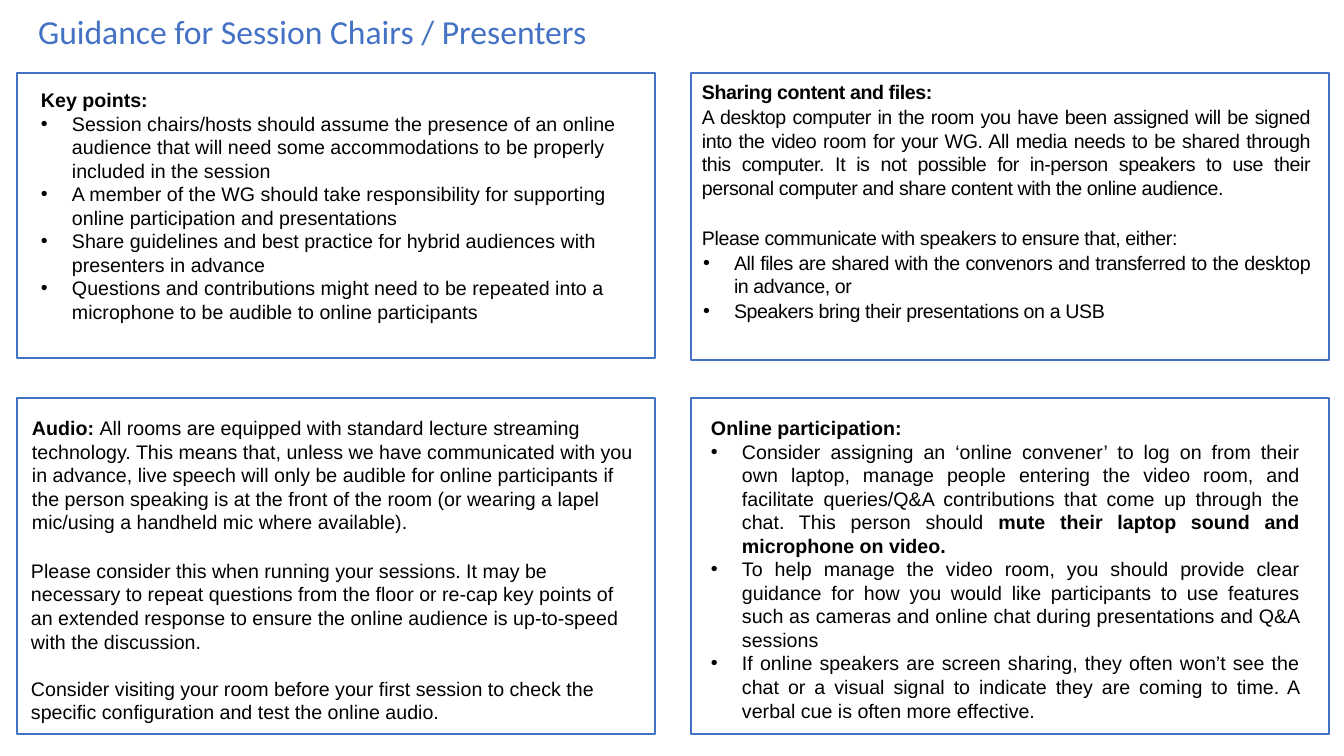
from lxml import etree
from pptx import Presentation
from pptx.dml.color import RGBColor
from pptx.enum.shapes import MSO_SHAPE
from pptx.enum.text import MSO_ANCHOR, MSO_AUTO_SIZE, PP_ALIGN
from pptx.oxml.ns import qn
from pptx.util import Pt

RECT = MSO_SHAPE.RECTANGLE
TOP, MIDDLE = MSO_ANCHOR.TOP, MSO_ANCHOR.MIDDLE
LEFT, JUSTIFY = PP_ALIGN.LEFT, PP_ALIGN.JUSTIFY
NO_FIT = MSO_AUTO_SIZE.NONE
PX = 12192000 / 1344
BLUE, BLACK = "4472C4", "000000"


def px(n):
    return round(n * PX)


def write(p, text, size=14, font="Arial", color=BLACK, align=LEFT, before=0,
          line=1.0, indent=0, bullet=False, spc=0):
    """Fill a paragraph; parts between asterisks are bold."""
    p.alignment, p.line_spacing = align, line
    p.space_before, p.space_after = Pt(before), Pt(0)
    pPr = p._p.get_or_add_pPr()
    pPr.set("marL", str(px(indent)))
    pPr.set("indent", str(px(-31) if bullet else 0))
    if bullet:
        etree.SubElement(pPr, qn("a:buFont")).set("typeface", "Arial")
        etree.SubElement(pPr, qn("a:buChar")).set("char", "•")
    else:
        etree.SubElement(pPr, qn("a:buNone"))
    for i, part in enumerate(text.split("*")):
        if part:
            r = p.add_run()
            r.text = part
            r.font.size, r.font.name, r.font.bold = Pt(size), font, i % 2 == 1
            r.font.color.rgb = RGBColor.from_string(color)
            if spc:
                r._r.get_or_add_rPr().set("spc", str(spc))


prs = Presentation()
prs.slide_width, prs.slide_height = px(1344), px(756)
s = prs.slides.add_slide(prs.slide_layouts[4])

# Title
title = s.shapes.title
title.left, title.top, title.width, title.height = map(px, (28, 14, 618, 40))
tf = title.text_frame
tf.vertical_anchor, tf.auto_size = MIDDLE, NO_FIT
write(tf.paragraphs[0], "Guidance for Session Chairs / Presenters",
      size=24, font="Calibri", color=BLUE, line=0.9)

# Paragraph formats
item = dict(indent=31, bullet=True)
item_just = dict(item, align=JUSTIFY)
tight = dict(indent=1, before=1, spc=-30)
tight_just = dict(tight, align=JUSTIFY)
tight_item = dict(tight_just, indent=33, bullet=True)

key_points = [
    ("*Key points:*", {}),
    ("Session chairs/hosts should assume the presence of an online audience that "
     "will need some accommodations to be properly included in the session", item),
    ("A member of the WG should take responsibility for supporting online "
     "participation and presentations", item),
    ("Share guidelines and best practice for hybrid audiences with presenters "
     "in advance", item),
    ("Questions and contributions might need to be repeated into a microphone to "
     "be audible to online participants", item),
]
sharing = [
    ("*Sharing content and files:*", tight),
    ("A desktop computer in the room you have been assigned will be signed into "
     "the video room for your WG. All media needs to be shared through this "
     "computer. It is not possible for in-person speakers to use their personal "
     "computer and share content with the online audience.", tight_just),
    ("Please communicate with speakers to ensure that, either:",
     dict(tight_just, before=19)),
    ("All files are shared with the convenors and transferred to the desktop in "
     "advance, or", tight_item),
    ("Speakers bring their presentations on a USB", tight_item),
]
audio = [
    ("*Audio: *All rooms are equipped with standard lecture streaming technology. "
     "This means that, unless we have communicated with you in advance, live "
     "speech will only be audible for online participants if the person speaking "
     "is at the front of the room (or wearing a lapel mic/using a handheld mic "
     "where available).", dict(indent=1, before=1)),
    ("Please consider this when running your sessions. It may be necessary to "
     "repeat questions from the floor or re-cap key points of an extended response "
     "to ensure the online audience is up-to-speed with the discussion.",
     dict(before=18)),
    ("Consider visiting your room before your first session to check the specific "
     "configuration and test the online audio.", dict(before=17)),
]
online = [
    ("*Online participation:*", {}),
    ("Consider assigning an ‘online convener’ to log on from their own laptop, "
     "manage people entering the video room, and facilitate queries/Q&A "
     "contributions that come up through the chat. This person should* mute their "
     "laptop sound and microphone on video.*", item_just),
    ("To help manage the video room, you should provide clear guidance for how you "
     "would like participants to use features such as cameras and online chat "
     "during presentations and Q&A sessions", item_just),
    ("If online speakers are screen sharing, they often won’t see the chat or a "
     "visual signal to indicate they are coming to time. A verbal cue is often "
     "more effective.", item_just),
]

# Four panels: placeholder, frame box, text box, insets, paragraphs
NORMAL, SLIM = (10, 5, 10, 5), (0, 1, 0, 0)
panels = [
    (1, (17, 73, 638, 285), (31, 83, 609, 271), NORMAL, key_points),
    (2, (691, 73, 638, 287), (701, 79, 609, 271), SLIM, sharing),
    (3, (17, 398, 638, 336), (31, 415, 609, 387), SLIM, audio),
    (4, (691, 398, 638, 336), (701, 411, 609, 367), NORMAL, online),
]
for idx, frame_box, text_box, insets, paragraphs in panels:
    frame = s.shapes.add_shape(RECT, *map(px, frame_box))
    frame.shadow.inherit = False
    frame.fill.background()
    frame.line.color.rgb = RGBColor.from_string(BLUE)
    frame.line.width = Pt(1)

    sp = s.placeholders[idx]
    sp.left, sp.top, sp.width, sp.height = map(px, text_box)
    tf = sp.text_frame
    tf.word_wrap, tf.auto_size, tf.vertical_anchor = True, NO_FIT, TOP
    (tf.margin_left, tf.margin_top,
     tf.margin_right, tf.margin_bottom) = map(px, insets)
    for i, (text, style) in enumerate(paragraphs):
        p = tf.add_paragraph() if i else tf.paragraphs[0]
        write(p, text, **style)

prs.save("out.pptx")
